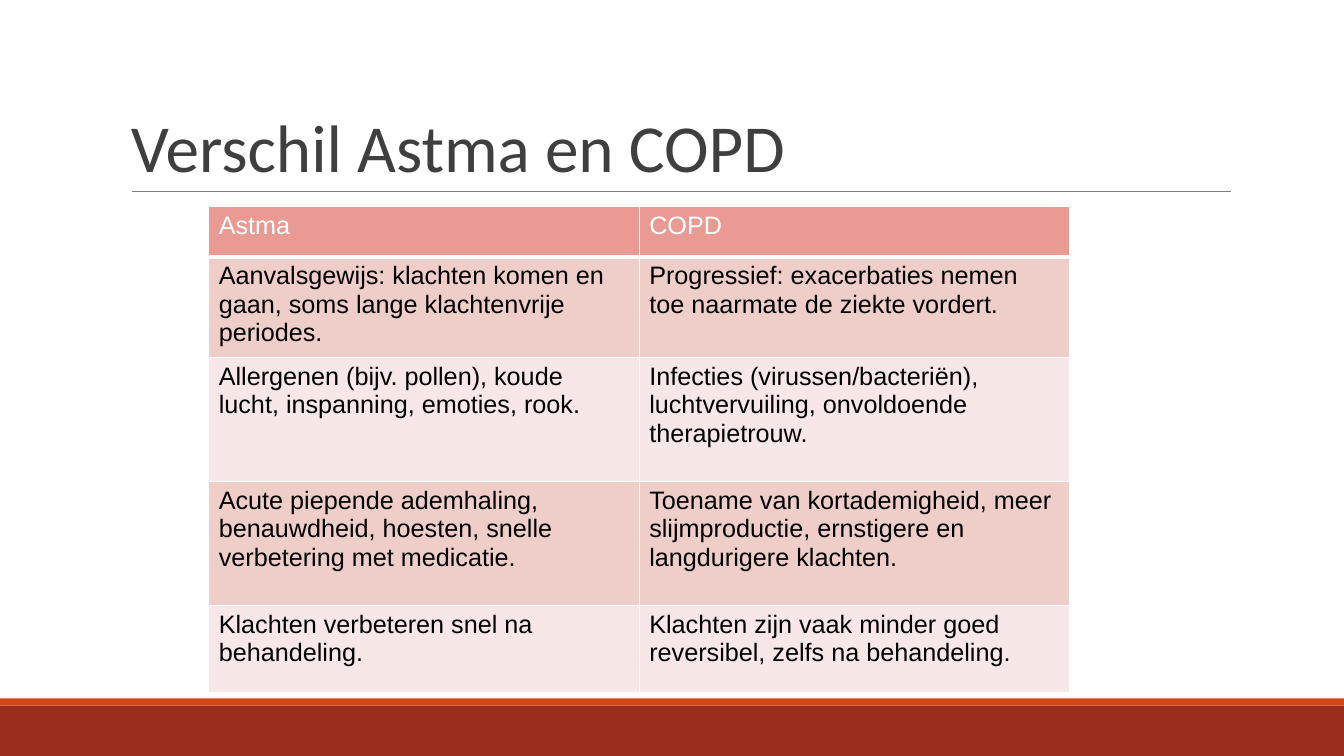
from lxml import etree
from pptx import Presentation
from pptx.dml.color import RGBColor
from pptx.enum.shapes import MSO_CONNECTOR as CONN, MSO_SHAPE as SHAPE
from pptx.enum.text import MSO_ANCHOR as ANCHOR
from pptx.oxml.ns import qn
from pptx.util import Inches, Pt

WHITE = RGBColor(0xFF, 0xFF, 0xFF)
BLACK = RGBColor(0x00, 0x00, 0x00)
TITLE_GREY = RGBColor(0x3F, 0x3F, 0x3F)
RULE_GREY = RGBColor(0x7F, 0x7F, 0x7F)
DARK_RED = RGBColor(0x9B, 0x2D, 0x1F)
ORANGE = RGBColor(0xD3, 0x48, 0x17)
HEADER_PINK = RGBColor(0xE9, 0x9A, 0x92)
BANDS = [RGBColor(0xEF, 0xCE, 0xCA), RGBColor(0xF7, 0xE8, 0xE7)]

TITLE = "Verschil Astma en COPD"
ROWS = [
    ("Astma", "COPD"),
    ("Aanvalsgewijs: klachten komen en gaan, soms lange klachtenvrije periodes.",
     "Progressief: exacerbaties nemen toe naarmate de ziekte vordert."),
    ("Allergenen (bijv. pollen), koude lucht, inspanning, emoties, rook.",
     "Infecties (virussen/bacteriën), luchtvervuiling, onvoldoende therapietrouw."),
    ("Acute piepende ademhaling, benauwdheid, hoesten, snelle verbetering met medicatie.",
     "Toename van kortademigheid, meer slijmproductie, ernstigere en langdurigere klachten."),
    ("Klachten verbeteren snel na behandeling.",
     "Klachten zijn vaak minder goed reversibel, zelfs na behandeling."),
]
ROW_HEIGHTS = [0.5, 0.86, 1.23, 1.23, 0.86]


def add_run(p, text, color, **font):
    r = p.add_run()
    r.text = text
    r.font.color.rgb = color
    for name, value in font.items():
        setattr(r.font, name, value)


def add_footer(s, left, top, width, height, stripe=0.07):
    # Dark band with a thin stripe on its upper edge
    for y, h, color in [(top, height, DARK_RED), (top - stripe, stripe, ORANGE)]:
        band = s.shapes.add_shape(SHAPE.RECTANGLE, Inches(left), Inches(y),
                                  Inches(width), Inches(h))
        band.shadow.inherit = False
        band.fill.solid()
        band.fill.fore_color.rgb = color
        band.line.fill.background()


def add_title(s, left, top, width, height):
    # Rule under the title
    bottom = Inches(top + height)
    rule = s.shapes.add_connector(CONN.STRAIGHT, Inches(left + 0.11), bottom,
                                  Inches(left + width + 0.01), bottom)
    rule.line.color.rgb = RULE_GREY
    rule.line.width = Pt(0.75)
    etree.SubElement(rule._element.spPr, qn("a:effectLst"))

    # Title text
    tf = s.shapes.add_textbox(Inches(left), Inches(top),
                              Inches(width), Inches(height)).text_frame
    tf.word_wrap = True
    tf.vertical_anchor = ANCHOR.BOTTOM
    p = tf.paragraphs[0]
    p.line_spacing = 0.85
    add_run(p, TITLE, TITLE_GREY, name="Calibri", size=Pt(48))


def set_borders(cell, widths):
    tc_pr = cell._tc.get_or_add_tcPr()
    for i, (side, width) in enumerate(widths.items()):
        ln = etree.Element(qn(f"a:ln{side}"), w=str(Pt(width)))
        fill = etree.SubElement(ln, qn("a:solidFill"))
        etree.SubElement(fill, qn("a:srgbClr"), val=str(WHITE))
        tc_pr.insert(i, ln)


def add_comparison(s, left, top, width):
    table = s.shapes.add_table(len(ROWS), 2, Inches(left), Inches(top),
                               Inches(width), Inches(sum(ROW_HEIGHTS))).table
    for col in table.columns:
        col.width = Inches(width / 2)
    for i, (texts, height) in enumerate(zip(ROWS, ROW_HEIGHTS)):
        table.rows[i].height = Inches(height)
        header = i == 0
        borders = {"L": 1, "R": 1, "T": 3 if i == 1 else 1, "B": 3 if header else 1}
        for j, text in enumerate(texts):
            cell = table.cell(i, j)
            cell.fill.solid()
            cell.fill.fore_color.rgb = HEADER_PINK if header else BANDS[(i - 1) % 2]
            set_borders(cell, borders)
            add_run(cell.text_frame.paragraphs[0], text, WHITE if header else BLACK,
                    name="Arial", size=Pt(18), bold=False)


def main():
    prs = Presentation()
    prs.slide_width, prs.slide_height = Inches(13.33), Inches(7.5)
    s = prs.slides.add_slide(prs.slide_layouts[6])
    add_footer(s, 0, 7, 13.33, 0.5)
    add_title(s, 1.2, 0.31, 11, 1.59)
    add_comparison(s, 2.07, 2.05, 8.54)
    prs.save("out.pptx")


if __name__ == "__main__":
    main()
